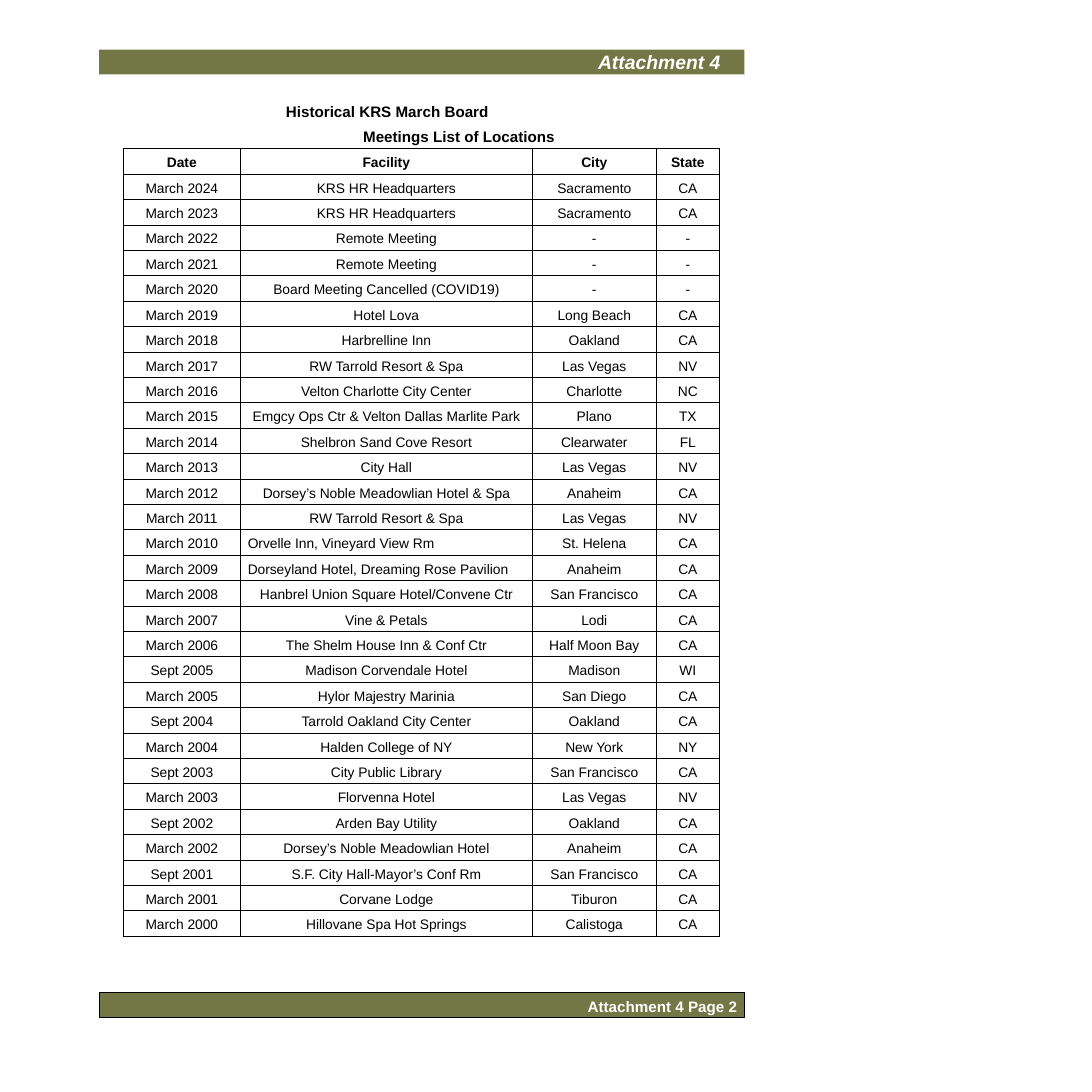
"""Build the attachment page listing the locations of past board meetings."""
import lxml.etree
import pptx
import pptx.dml.color
import pptx.enum.shapes
import pptx.enum.text
import pptx.oxml.ns
import pptx.util

Pt = pptx.util.Pt
qn = pptx.oxml.ns.qn
ALIGN = pptx.enum.text.PP_ALIGN
RECTANGLE = pptx.enum.shapes.MSO_SHAPE.RECTANGLE
OLIVE, WHITE, BLACK = "737745", "FFFFFF", "000000"

MEETINGS = [
    ("Date", "Facility", "City", "State"),
    ("March 2024", "KRS HR Headquarters", "Sacramento", "CA"),
    ("March 2023", "KRS HR Headquarters", "Sacramento", "CA"),
    ("March 2022", "Remote Meeting", "-", "-"),
    ("March 2021", "Remote Meeting", "-", "-"),
    ("March 2020", "Board Meeting Cancelled (COVID19)", "-", "-"),
    ("March 2019", "Hotel Lova", "Long Beach", "CA"),
    ("March 2018", "Harbrelline Inn", "Oakland", "CA"),
    ("March 2017", "RW Tarrold Resort & Spa", "Las Vegas", "NV"),
    ("March 2016", "Velton Charlotte City Center", "Charlotte", "NC"),
    ("March 2015", "Emgcy Ops Ctr & Velton Dallas Marlite Park", "Plano", "TX"),
    ("March 2014", "Shelbron Sand Cove Resort", "Clearwater", "FL"),
    ("March 2013", "City Hall", "Las Vegas", "NV"),
    ("March 2012", "Dorsey’s Noble Meadowlian Hotel & Spa", "Anaheim", "CA"),
    ("March 2011", "RW Tarrold Resort & Spa", "Las Vegas", "NV"),
    ("March 2010", "Orvelle Inn, Vineyard View Rm", "St. Helena", "CA"),
    ("March 2009", "Dorseyland Hotel, Dreaming Rose Pavilion", "Anaheim", "CA"),
    ("March 2008", "Hanbrel Union Square Hotel/Convene Ctr", "San Francisco", "CA"),
    ("March 2007", "Vine & Petals", "Lodi", "CA"),
    ("March 2006", "The Shelm House Inn & Conf Ctr", "Half Moon Bay", "CA"),
    ("Sept 2005", "Madison Corvendale Hotel", "Madison", "WI"),
    ("March 2005", "Hylor Majestry Marinia", "San Diego", "CA"),
    ("Sept 2004", "Tarrold Oakland City Center", "Oakland", "CA"),
    ("March 2004", "Halden College of NY", "New York", "NY"),
    ("Sept 2003", "City Public Library", "San Francisco", "CA"),
    ("March 2003", "Florvenna Hotel", "Las Vegas", "NV"),
    ("Sept 2002", "Arden Bay Utility", "Oakland", "CA"),
    ("March 2002", "Dorsey’s Noble Meadowlian Hotel", "Anaheim", "CA"),
    ("Sept 2001", "S.F. City Hall-Mayor’s Conf Rm", "San Francisco", "CA"),
    ("March 2001", "Corvane Lodge", "Tiburon", "CA"),
    ("March 2000", "Hillovane Spa Hot Springs", "Calistoga", "CA"),
]
LEFT_ALIGNED_DATES = ("March 2010", "March 2009")
COLUMN_WIDTHS = (84.9, 211.7, 90, 45.7)
ROW_HEIGHT = 18.45


def rgb(value):
    return pptx.dml.color.RGBColor.from_string(value)


def write(frame, text, size, color, bold=True, align=ALIGN.LEFT):
    frame.word_wrap = True
    frame.margin_left = frame.margin_right = frame.margin_bottom = 0
    paragraph = frame.paragraphs[0]
    paragraph.text = text
    paragraph.alignment = align
    paragraph.font.name = "Arial"
    paragraph.font.size = Pt(size)
    paragraph.font.bold = bold
    paragraph.font.color.rgb = rgb(color)
    return paragraph


presentation = pptx.Presentation()
presentation.slide_width = presentation.slide_height = Pt(792)
slide = presentation.slides.add_slide(presentation.slide_layouts[6])

bars = []
for top, height in ((36, 18), (719.5, 18.5)):
    bar = slide.shapes.add_shape(RECTANGLE, Pt(72), Pt(top), Pt(468), Pt(height))
    bar.shadow.inherit = False
    bar.fill.solid()
    bar.fill.fore_color.rgb = rgb(OLIVE)
    bar.line.fill.background()
    bars.append(bar)
header, footer = bars
footer.line.color.rgb = rgb(BLACK)
footer.line.width = Pt(0.5)

attachment = write(header.text_frame, "Attachment 4", 14, WHITE, align=ALIGN.RIGHT)
attachment.font.italic = True
header.text_frame.margin_top = 0
header.text_frame.margin_right = Pt(17.3)

heading = slide.shapes.add_textbox(Pt(206.6), Pt(68.4), Pt(210), Pt(38))
heading.text_frame.margin_top = Pt(1)
title = write(heading.text_frame, "Historical KRS March Board\vMeetings List of Locations", 11, BLACK)
title.line_spacing = 1.36
title.space_before = Pt(1)
title_indent = title._p.get_or_add_pPr()
title_indent.set("marL", str(Pt(56.8)))
title_indent.set("indent", str(Pt(-56)))

page = slide.shapes.add_textbox(Pt(426.2), Pt(723.2), Pt(118), Pt(14.4))
page.text_frame.margin_top = 0
write(page.text_frame, "Attachment 4 Page 2", 11, WHITE)

locations = slide.shapes.add_table(
    len(MEETINGS), len(COLUMN_WIDTHS), Pt(89.4), Pt(107.8),
    Pt(sum(COLUMN_WIDTHS)), Pt(ROW_HEIGHT * len(MEETINGS))).table
locations.first_row = locations.horz_banding = False
for column, width in zip(locations.columns, COLUMN_WIDTHS):
    column.width = Pt(width)

for row_index, meeting in enumerate(MEETINGS):
    locations.rows[row_index].height = Pt(ROW_HEIGHT)
    for column_index, text in enumerate(meeting):
        cell = locations.cell(row_index, column_index)
        flush_left = column_index == 1 and meeting[0] in LEFT_ALIGNED_DATES
        write(cell.text_frame, text, 10, BLACK, row_index == 0,
              ALIGN.LEFT if flush_left else ALIGN.CENTER)
        cell.margin_left = Pt(5.4 if flush_left else 0)
        cell.margin_right = cell.margin_bottom = 0
        cell.margin_top = Pt(4.9)
        properties = cell._tc.get_or_add_tcPr()
        for side in ("a:lnL", "a:lnR", "a:lnT", "a:lnB"):
            border = lxml.etree.SubElement(properties, qn(side), w=str(Pt(0.5)))
            border_fill = lxml.etree.SubElement(border, qn("a:solidFill"))
            lxml.etree.SubElement(border_fill, qn("a:srgbClr"), val=BLACK)
        cell.fill.background()

presentation.save("out.pptx")
